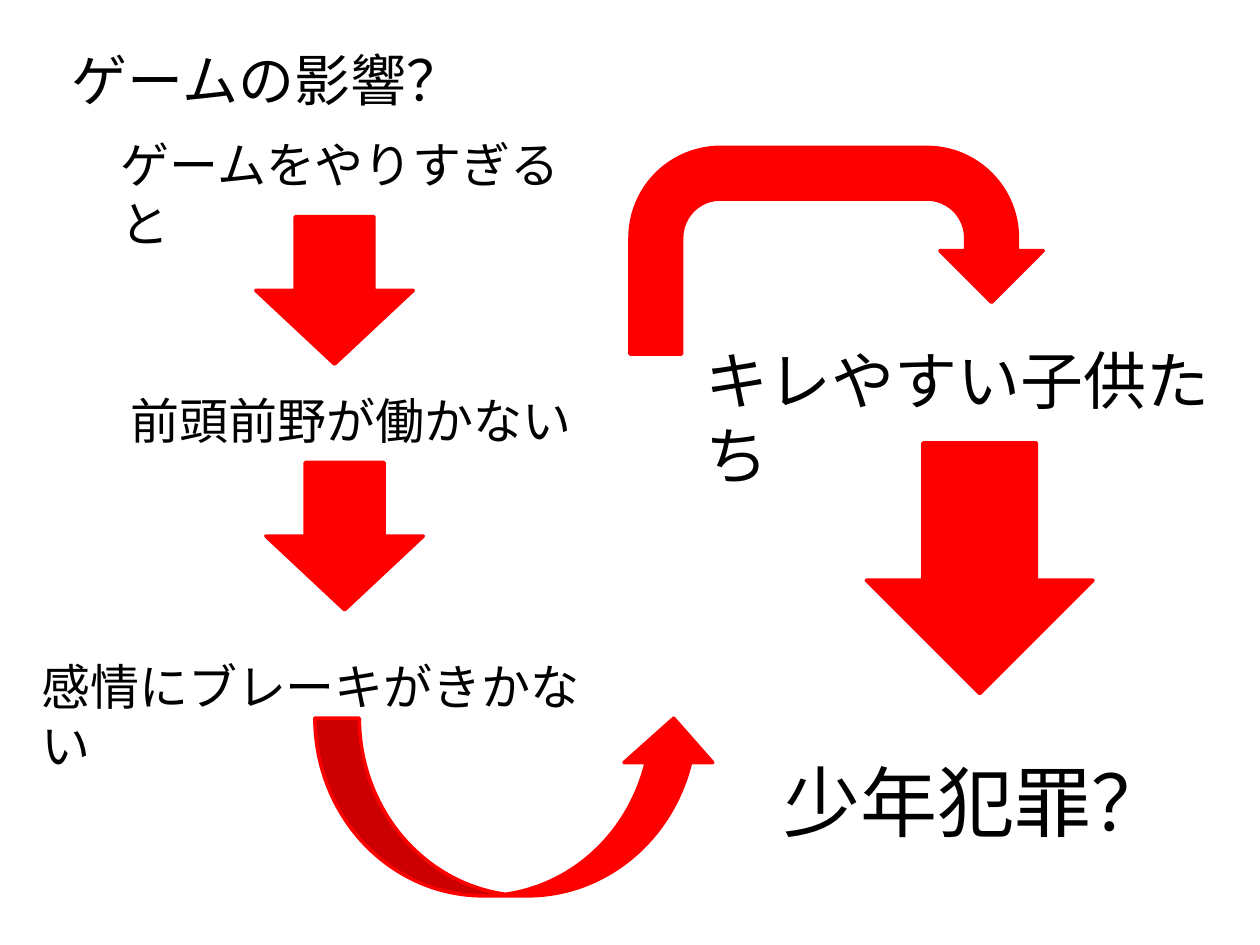
from dataclasses import dataclass

from pptx import Presentation
from pptx.dml.color import RGBColor
from pptx.enum.shapes import MSO_SHAPE
from pptx.enum.text import MSO_ANCHOR, MSO_AUTO_SIZE, PP_ALIGN
from pptx.util import Inches, Pt


@dataclass(frozen=True)
class Theme:
    font: str = "Calibri"
    ink: RGBColor = RGBColor(0, 0, 0)
    red: RGBColor = RGBColor(255, 0, 0)
    line: Pt = Pt(2)
    title: Pt = Pt(32)
    step: Pt = Pt(28)
    result: Pt = Pt(36)
    crime: Pt = Pt(44)


THEME = Theme()


def place(shape, box, x, y, w, h):
    """Set a shape's frame, in inches from the corner of box."""
    shape.left, shape.top = Inches(box[0] + x), Inches(box[1] + y)
    shape.width, shape.height = Inches(w), Inches(h)


def write(shape, text, size, align=PP_ALIGN.LEFT):
    frame = shape.text_frame
    frame.text = text
    frame.word_wrap = True
    frame.auto_size = MSO_AUTO_SIZE.SHAPE_TO_FIT_TEXT
    frame.vertical_anchor = MSO_ANCHOR.TOP
    para = frame.paragraphs[0]
    para.alignment = align
    font = para.runs[0].font
    font.name, font.size = THEME.font, size
    font.color.rgb = THEME.ink


def label(slide, box, frame, text, size, align=PP_ALIGN.LEFT):
    shape = slide.shapes.add_textbox(0, 0, 0, 0)
    place(shape, box, *frame)
    write(shape, text, size, align)


def arrow(slide, box, frame, kind=MSO_SHAPE.RIGHT_ARROW, turn=0):
    shape = slide.shapes.add_shape(kind, 0, 0, 0, 0)
    place(shape, box, *frame)
    shape.rotation = turn
    shape.shadow.inherit = False
    shape.fill.solid()
    shape.fill.fore_color.rgb = THEME.red
    shape.line.color.rgb = THEME.red
    shape.line.width = THEME.line


def heading(slide, box):
    title = slide.shapes.title
    place(title, box, 0, 0, 4.38, 0.64)
    write(title, "ゲームの影響？", THEME.title)


def causes(slide, box):
    """Three steps down the left, with an arrow after each of the first two."""
    steps = (
        ("ゲームをやりすぎると", 0.63, 0, 3.73),
        ("前頭前野が働かない", 0.71, 2.03, 3.75),
        ("感情にブレーキがきかない", 0, 4.14, 4.77),
    )
    for text, x, y, w in steps:
        label(slide, box, (x, y, w, 0.57), text, THEME.step)
    for x, y in ((1.84, 0.66), (1.92, 2.61)):
        arrow(slide, box, (x, y, 1.17, 1.25), turn=90)


def effects(slide, box):
    """The outcome on the right, leading down to crime."""
    label(slide, box, (0, 0, 4.5, 0.71), "キレやすい子供たち", THEME.result)
    arrow(slide, box, (1.28, 0.95, 1.99, 1.8), turn=90)
    label(slide, box, (0.36, 3.28, 3.78, 0.84), "少年犯罪？",
          THEME.crime, PP_ALIGN.CENTER)


def links(slide, box):
    """Curved arrows that carry the flow from the left to the right."""
    arrow(slide, box, (2.5, 0, 3.28, 1.64), MSO_SHAPE.U_TURN_ARROW)
    arrow(slide, box, (0, 4.53, 3.2, 1.41), MSO_SHAPE.CURVED_UP_ARROW)


def main():
    deck = Presentation()
    deck.slide_width, deck.slide_height = Inches(10), Inches(7.5)
    slide = deck.slides.add_slide(deck.slide_layouts.get_by_name("Title Only"))
    heading(slide, (0.47, 0.31))
    effects(slide, (5.5, 2.66))
    causes(slide, (0.23, 1.02))
    links(slide, (2.5, 1.17))
    deck.save("out.pptx")


if __name__ == "__main__":
    main()
